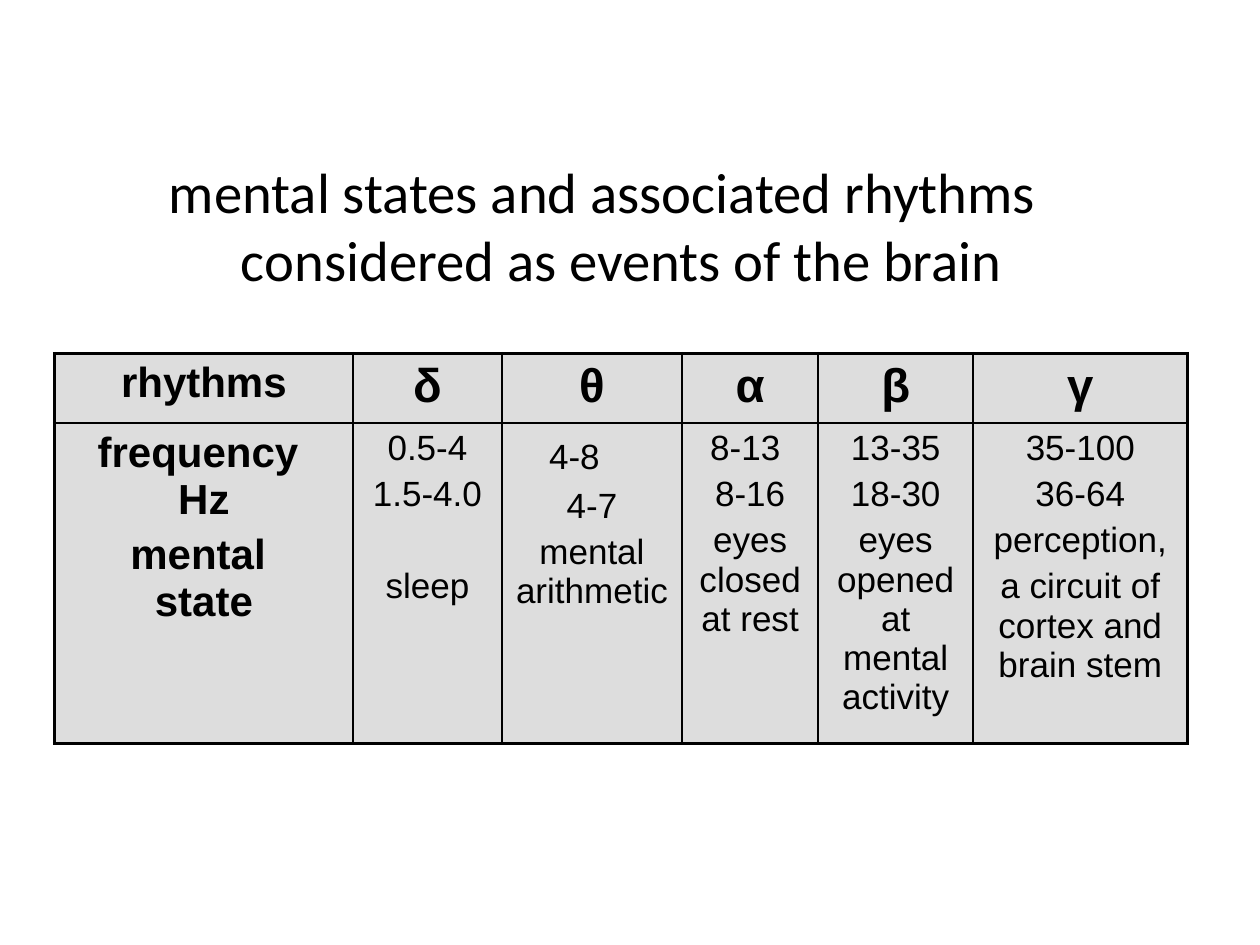
from dataclasses import dataclass

import pptx
import pptx.dml.color
import pptx.enum.text
import pptx.oxml
import pptx.oxml.ns
import pptx.table
import pptx.util
from pptx.util import Pt

BLACK = pptx.dml.color.RGBColor(0x00, 0x00, 0x00)
GREY = pptx.dml.color.RGBColor(0xDD, 0xDD, 0xDD)
OUTER_BORDER, INNER_BORDER = 2.25, 1
SPACING = 0.2  # space before a paragraph, as a share of its font size


@dataclass
class Column:
    width: float
    heading: str
    lines: list[str]
    heading_size: float = 27
    body_size: float = 20
    body_bold: bool = False


COLUMNS = [
    Column(170.6, "rhythms", ["frequency \vHz", "mental \vstate"], 24, 24, True),
    Column(85, "δ", ["0.5-4", "1.5-4.0", "sleep"]),
    Column(103, "θ", ["4-8\u3000".replace("\u3000", "　"), "4-7", "mental arithmetic"]),
    Column(77.8, "α", ["8-13 ", "8-16", "eyes closed at rest"]),
    Column(88.6, "β", ["13-35", "18-30", "eyes opened at mental activity"]),
    Column(122.4, "γ", ["35-100", "36-64", "perception,",
                        "a circuit of cortex and brain stem"]),
]
COLUMNS[2].lines[0] = "4-8　"
ROW_HEIGHTS = [37, 175.7]


def set_borders(cell: pptx.table._Cell, widths: dict[str, float]) -> None:
    """Put border lines, keyed L, R, T, B in that order, ahead of the cell's fill."""
    properties = cell._tc.get_or_add_tcPr()
    for index, (side, width) in enumerate(widths.items()):
        line = pptx.oxml.parse_xml(
            f'<a:ln{side} {pptx.oxml.ns.nsdecls("a")} w="{Pt(width)}">'
            f'<a:solidFill><a:srgbClr val="{BLACK}"/></a:solidFill></a:ln{side}>')
        properties.insert(index, line)


def fill_cell(cell: pptx.table._Cell, lines: list[str], size: float, bold: bool) -> None:
    cell.fill.solid()
    cell.fill.fore_color.rgb = GREY
    cell.text_frame.text = "\n".join(lines)
    for paragraph in cell.text_frame.paragraphs:
        paragraph.alignment = pptx.enum.text.PP_ALIGN.CENTER
        paragraph.space_before = Pt(size * SPACING)
        paragraph.font.name = "Arial"
        paragraph.font.size = Pt(size)
        paragraph.font.bold = bold
        paragraph.font.color.rgb = BLACK


def add_title(slide) -> None:
    box = slide.shapes.add_textbox(Pt(86.4), Pt(83.5), Pt(515.5), Pt(90))
    frame = box.text_frame
    frame.word_wrap = True
    frame.vertical_anchor = pptx.enum.text.MSO_ANCHOR.MIDDLE
    frame.text = "mental states and associated rhythms\nconsidered as events of the brain"
    for paragraph in frame.paragraphs:
        paragraph.alignment = pptx.enum.text.PP_ALIGN.CENTER
        paragraph.font.name = "Calibri"
        paragraph.font.size = Pt(32.4)
        paragraph.font.color.rgb = BLACK
    second_line = frame.paragraphs[1]._p.get_or_add_pPr()
    second_line.set("marL", str(Pt(22)))
    second_line.set("indent", "0")


def add_rhythm_table(slide) -> None:
    total_width = sum(column.width for column in COLUMNS)
    table = slide.shapes.add_table(
        len(ROW_HEIGHTS), len(COLUMNS),
        Pt(31.2), Pt(202), Pt(total_width), Pt(sum(ROW_HEIGHTS))).table
    table.first_row = table.horz_banding = False
    for row, height in zip(table.rows, ROW_HEIGHTS):
        row.height = Pt(height)

    last_column, last_row = len(COLUMNS) - 1, len(ROW_HEIGHTS) - 1
    for index, column in enumerate(COLUMNS):
        table.columns[index].width = Pt(column.width)
        fill_cell(table.cell(0, index), [column.heading], column.heading_size, True)
        fill_cell(table.cell(1, index), column.lines, column.body_size, column.body_bold)
        for row_index in range(len(ROW_HEIGHTS)):
            on_edge = {"L": index == 0, "R": index == last_column,
                       "T": row_index == 0, "B": row_index == last_row}
            set_borders(table.cell(row_index, index),
                        {side: OUTER_BORDER if edge else INNER_BORDER
                         for side, edge in on_edge.items()})

    sleep = table.cell(1, 1).text_frame.paragraphs[-1]
    sleep.space_before = Pt(30)


def main() -> None:
    presentation = pptx.Presentation()
    presentation.slide_width, presentation.slide_height = Pt(720), Pt(540)
    slide = presentation.slides.add_slide(presentation.slide_layouts[6])
    add_title(slide)
    add_rhythm_table(slide)
    presentation.save("out.pptx")


if __name__ == "__main__":
    main()
